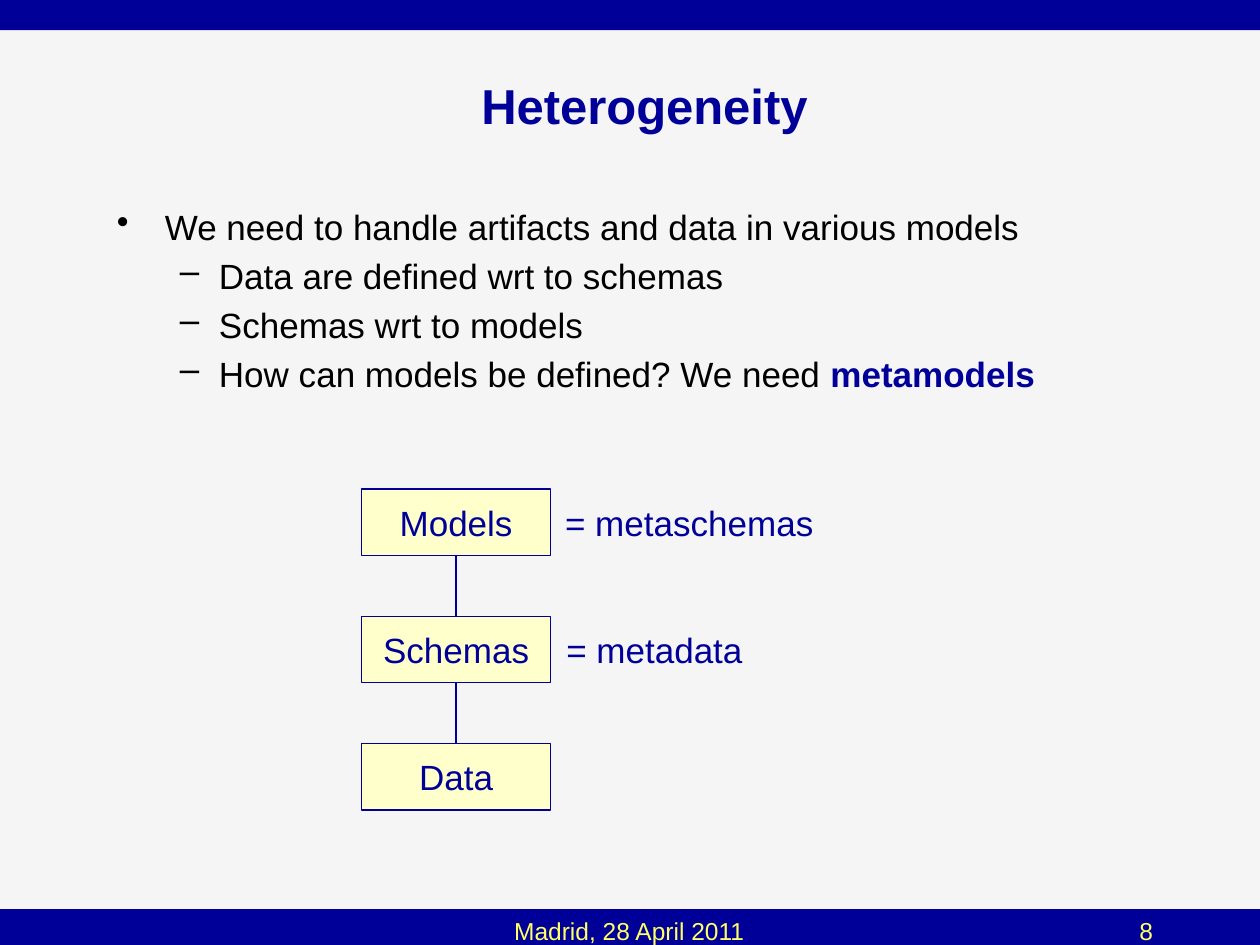
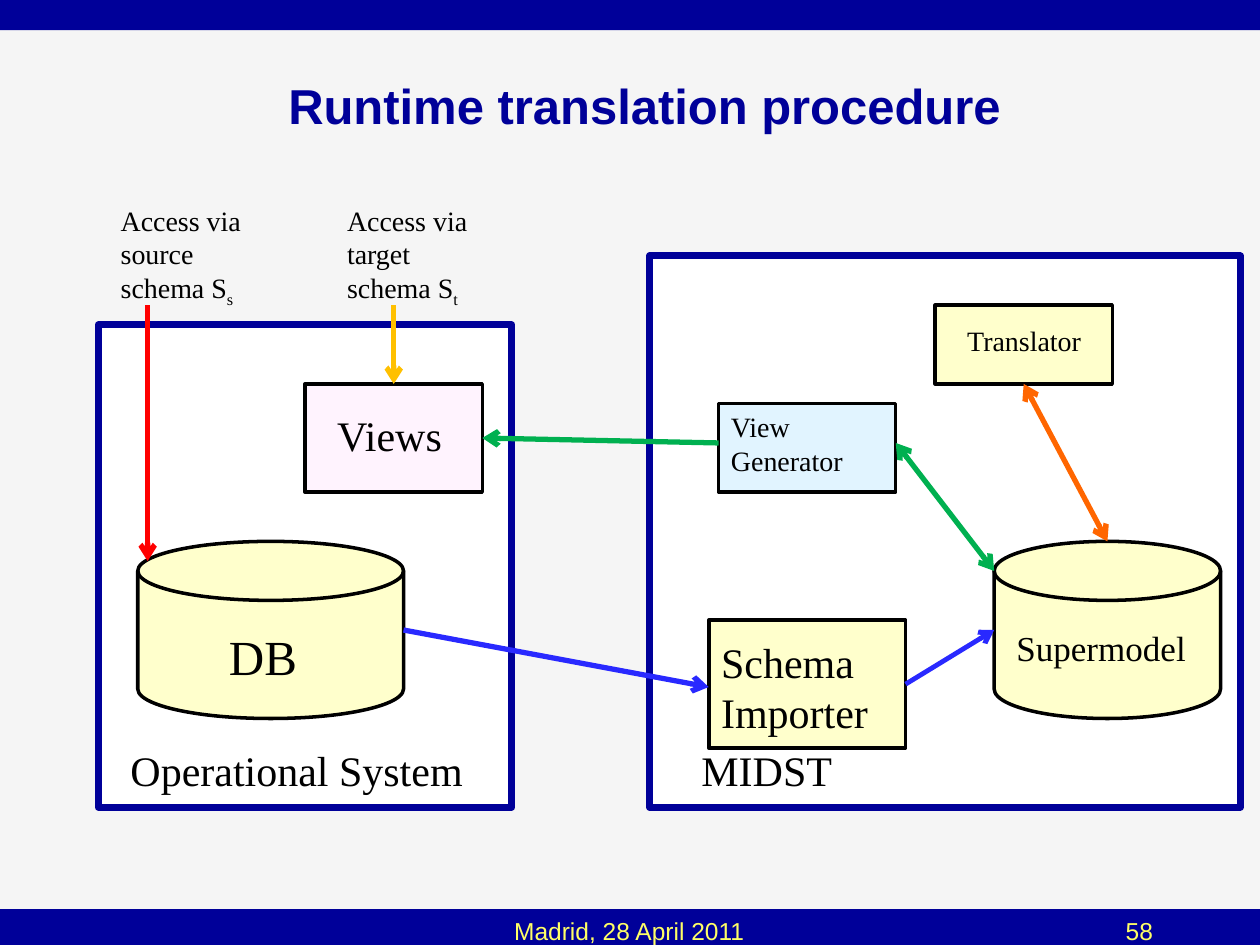
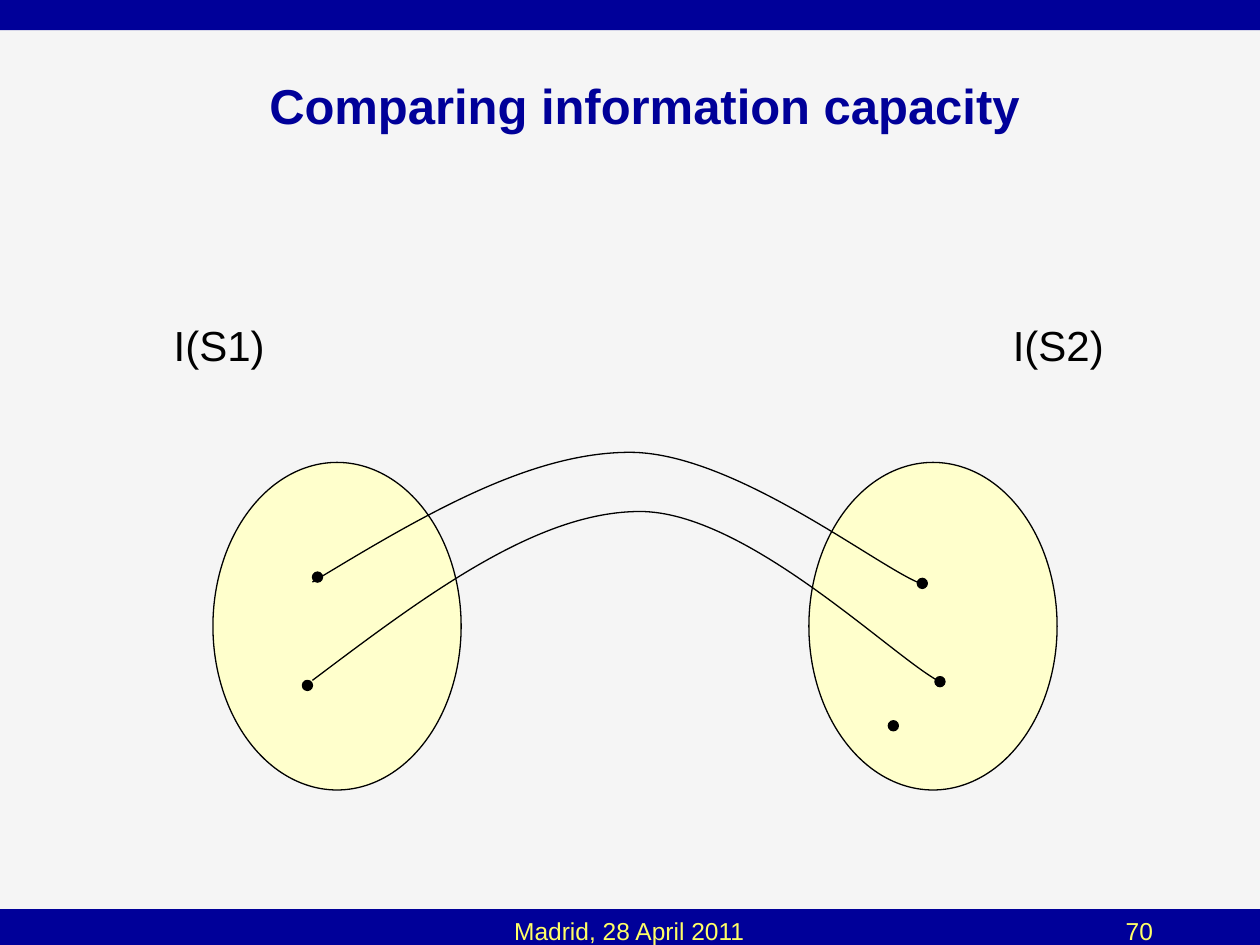
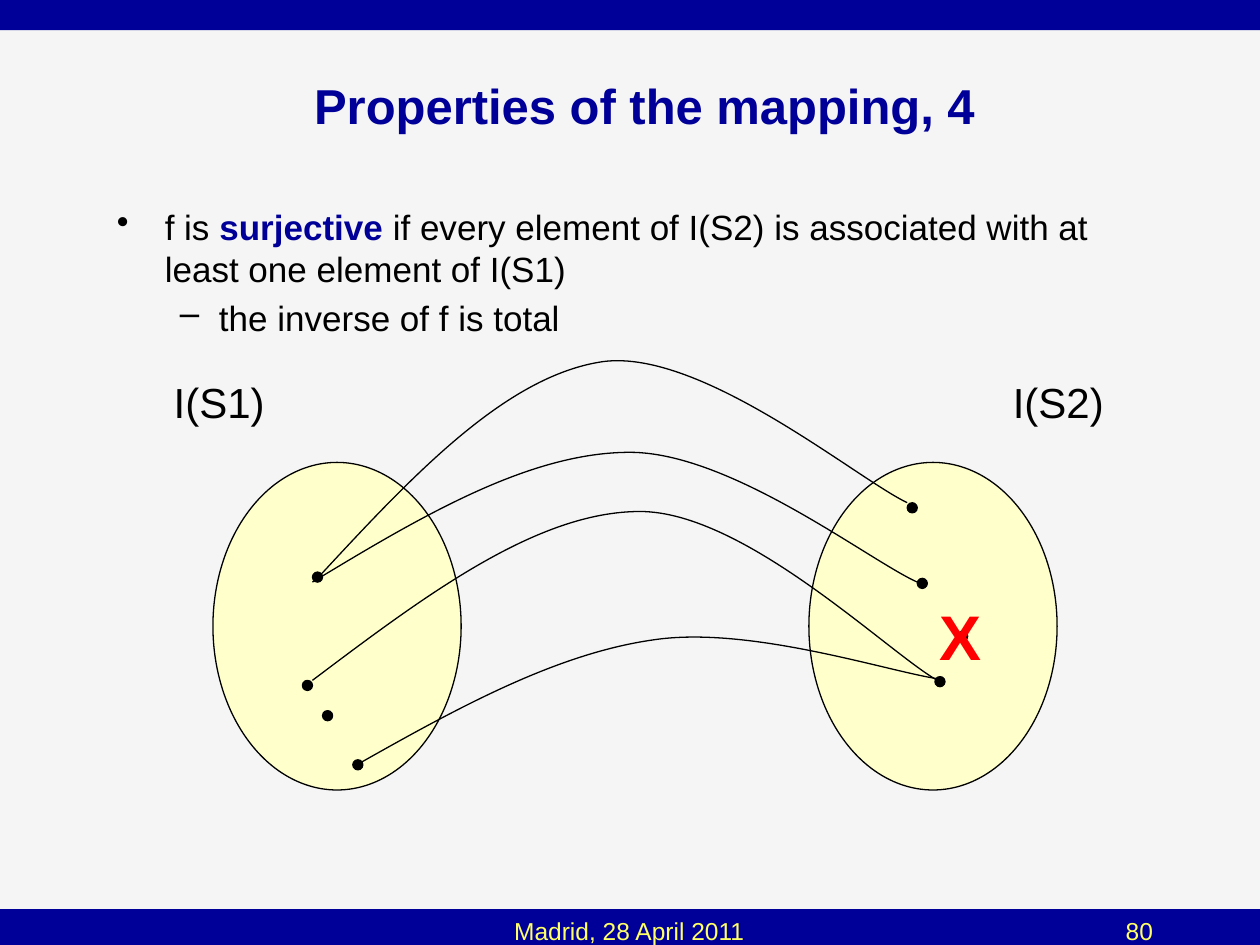
from dataclasses import dataclass

from lxml.etree import SubElement
from pptx import Presentation
from pptx.dml.color import RGBColor
from pptx.enum.shapes import MSO_CONNECTOR, MSO_SHAPE as SHAPE
from pptx.enum.text import MSO_ANCHOR as ANCHOR, MSO_AUTO_SIZE as AUTOSIZE, PP_ALIGN as ALIGN
from pptx.oxml.ns import qn
from pptx.util import Inches, Pt

COLORS = {
    "navy": "000099", "paper": "F5F5F5", "footer": "FFFF66", "black": "000000",
    "white": "FFFFFF", "cream": "FFFFCC", "sky": "E1F4FF", "pink": "FFF3FE",
    "orange": "FF6600", "green": "00B050", "blue": "2929FF", "amber": "FFC000",
    "red": "FF0000",
}
W, H = 10, 7.5
SERIF = "Times New Roman"
KEYWORD = {"color": "navy", "bold": True}
BULLETS = [("•", 0.38, -0.38), ("–", 0.81, -0.31)]  # character, margin, indent


@dataclass
class Grid:
    """A box in inches, divided into columns and rows."""
    x: float
    y: float
    w: float
    h: float
    cols: float = 1
    rows: float = 1

    def point(self, c, r):
        return (Inches(self.x + c * self.w / self.cols),
                Inches(self.y + r * self.h / self.rows))

    def box(self, c, r, w, h):
        return (*self.point(c, r), Inches(w * self.w / self.cols),
                Inches(h * self.h / self.rows))


PAGE = Grid(0, 0, W, H, W, H)


def rgb(name):
    return RGBColor.from_string(COLORS[name])


# Text

def add_run(p, text, font="Arial", size=20, color="black", bold=False, baseline=None):
    r = p.add_run()
    r.text = text
    r.font.name, r.font.size, r.font.bold = font, Pt(size), bold
    r.font.color.rgb = rgb(color)
    if baseline:
        r.font._element.set("baseline", str(baseline * 1000))


def write(tf, paras, align=ALIGN.LEFT, anchor=ANCHOR.TOP, wrap=True, grow=False, **fmt):
    """Each paragraph is a string or a list of strings and (text, format) pairs."""
    tf.word_wrap, tf.vertical_anchor = wrap, anchor
    tf.auto_size = AUTOSIZE.SHAPE_TO_FIT_TEXT if grow else AUTOSIZE.NONE
    for i, para in enumerate(paras):
        p = tf.add_paragraph() if i else tf.paragraphs[0]
        p.alignment = align
        for part in [para] if isinstance(para, str) else para:
            text, extra = (part, {}) if isinstance(part, str) else part
            add_run(p, text, **{**fmt, **extra})


def add_text(s, box, *paras, **fmt):
    tf = s.shapes.add_textbox(*box).text_frame
    write(tf, paras, **fmt)
    return tf


def add_bullets(s, *items):
    """Each item is (level, paragraph)."""
    tf = add_text(s, PAGE.box(0.83, 1.58, 8.5, 4.92), *[text for _, text in items])
    for i, (p, (level, _)) in enumerate(zip(tf.paragraphs, items)):
        char, margin, indent = BULLETS[level]
        pPr = p._p.get_or_add_pPr()
        pPr.set("marL", str(Inches(margin)))
        pPr.set("indent", str(Inches(indent)))
        SubElement(pPr, qn("a:buChar")).set("char", char)
        p.level = level
        if i:
            p.space_before = Pt(4)


# Shapes and lines

def add_shape(s, kind, box, fill, line=None, width=0.75):
    sp = s.shapes.add_shape(kind, *box)
    sp.shadow.inherit = False
    sp.fill.solid()
    sp.fill.fore_color.rgb = rgb(fill)
    if line:
        sp.line.color.rgb, sp.line.width = rgb(line), Pt(width)
    else:
        sp.line.fill.background()
    return sp


def add_line(s, start, end, color, width=0.75, ends=()):
    cx = s.shapes.add_connector(MSO_CONNECTOR.STRAIGHT, *start, *end)
    cx.line.color.rgb, cx.line.width = rgb(color), Pt(width)
    for end_tag in ends:
        SubElement(cx.line._get_or_add_ln(), qn(f"a:{end_tag}")).set("type", "arrow")
    SubElement(cx._element.spPr, qn("a:effectLst"))


def add_curve(s, points):
    """Bezier curve: a start point, then three points for each segment."""
    fb = s.shapes.build_freeform(*points[0])
    fb.add_line_segments(points[1:], close=False)
    sp = fb.convert_to_shape()
    path = sp._element.find(".//" + qn("a:path"))
    steps = path.findall(qn("a:lnTo"))
    for i in range(0, len(steps), 3):
        bezier = SubElement(path, qn("a:cubicBezTo"))
        for step in steps[i:i + 3]:
            bezier.append(step[0])
            path.remove(step)
    sp.shadow.inherit = False
    sp.fill.background()
    sp.line.color.rgb, sp.line.width = rgb("black"), Pt(0.75)


# Regions

def add_frame(prs, title, number):
    """Slide with background, bands, footer and title."""
    s = prs.slides.add_slide(prs.slide_layouts[6])
    s.background.fill.solid()
    s.background.fill.fore_color.rgb = rgb("paper")
    for top, height, line in [(7.22, 0.28, "navy"), (0.11, 0.13, None), (0, 0.13, None)]:
        add_shape(s, SHAPE.RECTANGLE, PAGE.box(0, top, W, height), "navy", line)
    for left, width, text, align in [(2.16, 5.67, "Madrid, 28 April 2011", ALIGN.CENTER),
                                     (7.91, 1.34, str(number), ALIGN.RIGHT)]:
        add_text(s, PAGE.box(left, 7.22, width, 0.28), text, align=align,
                 size=14, color="footer")
    add_text(s, PAGE.box(0.43, 0.25, 9.37, 1.17), title, align=ALIGN.CENTER,
             anchor=ANCHOR.MIDDLE, size=28, **KEYWORD)
    return s


def add_level_stack(s, g):
    """Levels joined top to bottom, each with an optional note (text, left)."""
    levels = [("Models", ("= metaschemas ", 1.26)), ("Schemas", ("= metadata", 1.05)),
              ("Data", None)]
    fmt = dict(align=ALIGN.CENTER, anchor=ANCHOR.MIDDLE, wrap=False, color="navy")
    height = 0.207
    step = (1 - height) / (len(levels) - 1)
    for i, (name, note) in enumerate(levels):
        top = i * step
        sp = add_shape(s, SHAPE.RECTANGLE, g.box(0, top, 1, height), "cream", "navy")
        write(sp.text_frame, [name], **fmt)
        if i:
            add_line(s, g.point(0.5, top - step + height), g.point(0.5, top), "navy")
        if note:
            add_text(s, g.box(note[1], top, 1, height), note[0], **fmt)


def add_architecture(s, g):
    # Systems and their components
    rect, disk = SHAPE.RECTANGLE, SHAPE.FLOWCHART_MAGNETIC_DISK
    for kind, cell, fill, line, width in [
        (rect, (0, 13, 42, 49), "white", "navy", 4),
        (rect, (56, 6, 60, 56), "white", "navy", 4),
        (rect, (85, 11, 18, 8), "cream", "black", 2),
        (rect, (63, 21, 18, 9), "sky", "black", 2),
        (rect, (62, 43, 20, 13), "cream", "black", 2),
        (rect, (21, 19, 18, 11), "pink", "black", 2),
        (disk, (4, 35, 27, 18), "cream", "black", 2),
        (disk, (91, 35, 23, 18), "cream", "black", 2),
    ]:
        add_shape(s, kind, g.box(*cell), fill, line, width)
    # Labels
    for cell, size, paras in [
        ((23, 21, 15, 5.1), 24, ["Views"]),
        ((12, 43, 10, 7.3), 28, ["DB"]),
        ((92, 43, 22, 5.6), 20, ["Supermodel"]),
        ((62, 44, 19, 11.6), 24, ["Schema", "Importer"]),
        ((63, 21, 21, 8.2), 16, ["View", "Generator"]),
        ((87, 12.2, 16, 4.7), 16, ["Translator"]),
        ((60, 55, 18, 6.4), 24, ["MIDST"]),
        ((2, 55, 42, 5.1), 24, ["Operational System"]),
    ]:
        add_text(s, g.box(*cell), *paras, grow=True, font=SERIF, size=size)
    # Flows
    head, tail = "headEnd", "tailEnd"
    for start, end, color, width, ends in [
        ((94, 19), (102.5, 35), "orange", 3, (head, tail)),
        ((81, 25), (91, 38), "green", 3, (head, tail)),
        ((82, 49.5), (91, 44), "blue", 2.75, (tail,)),
        ((39, 24.5), (63, 25), "green", 3, (head,)),
        ((62, 49.8), (31, 44), "blue", 3, (head,)),
        ((30, 19), (30, 11), "amber", 3, (head,)),
        ((5, 37), (5, 11), "red", 3, (head,)),
    ]:
        add_line(s, g.point(*start), g.point(*end), color, width, ends)
    # Access paths
    for col, schema in [(24, "target"), (1, "source")]:
        add_text(s, g.box(col, 0, 15, 11.6),
                 [f"Access via {schema} schema S", (schema[0], {"baseline": -25})],
                 grow=True, font=SERIF, size=16)


UPPER_ARC = [(7.9, 9.5), (16.5, 4.3), (25.1, -0.8), (33.1, -0.8),
             (41.1, -0.8), (52.1, 7.8), (55.9, 9.5)]
LOWER_ARC = [(7.9, 17.3), (16.8, 10.6), (25.7, 3.9), (33.9, 3.9),
             (42.2, 3.9), (53.6, 15.1), (57.5, 17.3)]
TOP_ARC = [(8.2, 9.3), (15.7, 1.2), (23.2, -6.9), (31, -8),
           (38.8, -9), (51.1, 1.3), (55.1, 3.2)]
BOTTOM_ARC = [(11.6, 23.9), (19.4, 19.5), (27.2, 15.2), (34.9, 14.1),
              (42.6, 12.9), (53.9, 16.7), (57.7, 17.2)]
SHARED_DOTS = [(7.9, 8.7), (55.9, 9.2), (57.3, 17), (7.1, 17.3)]


def add_mapping(s, g, label_row, dots, arcs):
    """Two sets of elements, joined by arcs."""
    for name, set_col, label_col in [("I(S1)", 0, -4.1), ("I(S2)", 47.3, 62.5)]:
        add_shape(s, SHAPE.OVAL, g.box(set_col, 0, 19.7, 26), "cream", "black")
        add_text(s, g.box(label_col, label_row, 9.2, 5), name, wrap=False,
                 grow=True, size=24)
    for arc in arcs:
        add_curve(s, [g.point(*pt) for pt in arc])
    for dot in SHARED_DOTS + dots:
        add_shape(s, SHAPE.OVAL, g.box(*dot, 0.8, 0.8), "black", "black")


def main():
    prs = Presentation()
    prs.slide_width, prs.slide_height = Inches(W), Inches(H)
    sets = Grid(1.69, 3.67, 6.7, 2.6, 67, 26)

    s = add_frame(prs, "Heterogeneity", 8)
    add_bullets(s, (0, "We need to handle artifacts and data in various models"),
                (1, "Data are defined wrt to schemas"),
                (1, "Schemas wrt to models"),
                (1, ["How can models be defined? We need ", ("metamodels", KEYWORD)]))
    add_level_stack(s, Grid(2.87, 3.88, 1.5, 2.55))

    s = add_frame(prs, "Runtime translation procedure", 58)
    cell = W / 128
    add_architecture(s, Grid(10 * cell, 20 * cell, 116 * cell, 62 * cell, 116, 62))

    s = add_frame(prs, "Comparing information capacity", 70)
    add_mapping(s, sets, -11.8, [(53.6, 20.5)], [UPPER_ARC, LOWER_ARC])

    s = add_frame(prs, "Properties of the mapping, 4", 80)
    add_bullets(s, (0, ["f is ", ("surjective", KEYWORD),
                        " if every element of I(S2) is associated with at "
                        "least one element of I(S1)"]),
                (1, "the inverse of f is total"))
    add_mapping(s, sets, -7.3, [(55.1, 3.2), (8.7, 19.7), (59.1, 13.4), (11.1, 23.6)],
                [UPPER_ARC, LOWER_ARC, TOP_ARC, BOTTOM_ARC])
    add_text(s, sets.box(56.7, 10.2, 11.8, 7), "X", grow=True, size=36,
             color="red", bold=True)

    prs.save("out.pptx")


if __name__ == "__main__":
    main()
